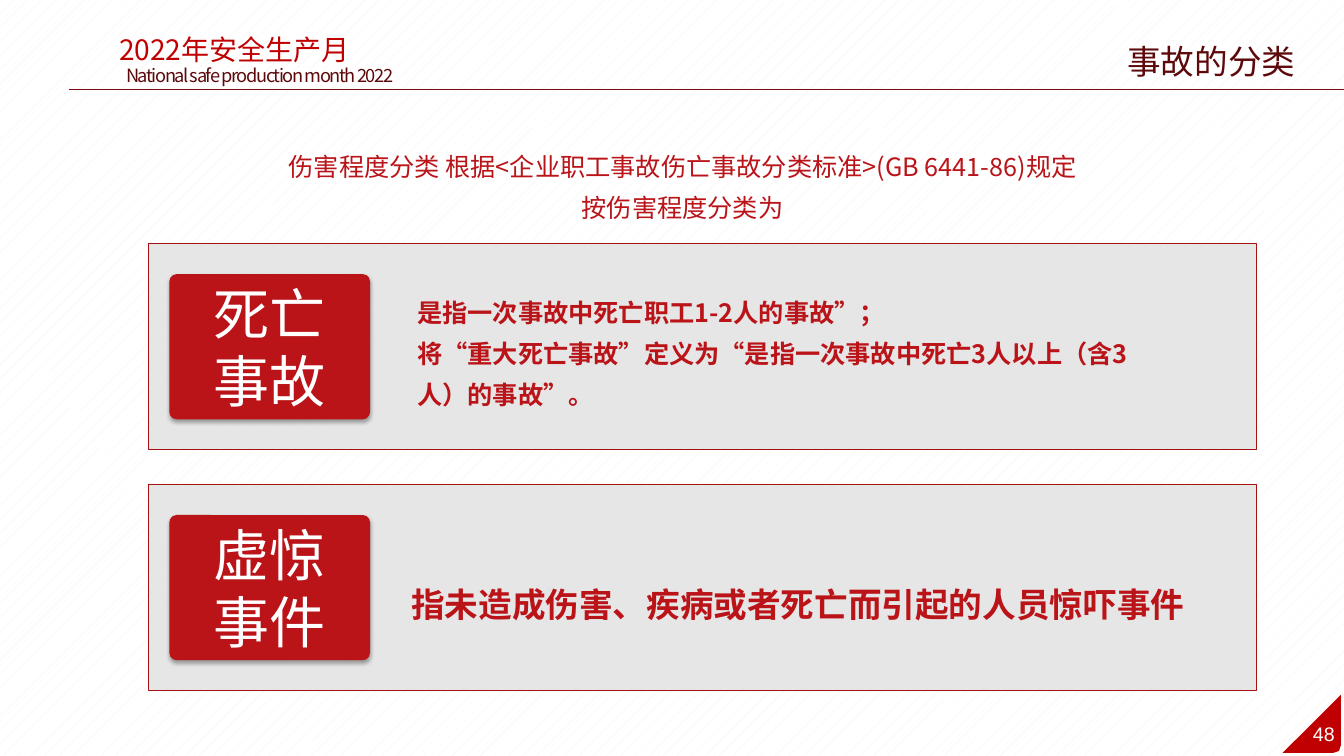
from lxml import etree
from pptx import Presentation
from pptx import util as u
from pptx.dml.color import RGBColor
from pptx.enum import dml, shapes, text
from pptx.oxml import parse_xml
from pptx.oxml.ns import nsdecls, qn

COLORS = {
    "red": "BA1318", "title red": "C00000", "dark red": "5D090C",
    "rule": "7C0D10", "border": "A71116", "grey": "D9D9D9",
    "white": "FFFFFF", "dots": "F2F2F2",
}
FONT = "Noto Sans CJK SC"
CENTER, LEFT = text.PP_ALIGN.CENTER, text.PP_ALIGN.LEFT


def color(name):
    return RGBColor.from_string(COLORS[name])


def write(box, lines, size, ink, align=CENTER, spacing=None, bold=False,
          font=FONT, wrap=True, tracking=None):
    frame = box.text_frame
    frame.word_wrap = wrap
    frame.text = "\n".join(lines)
    for para in frame.paragraphs:
        para.alignment = align
        if spacing:
            para.line_spacing = spacing
        para.font.size = u.Pt(size)
        para.font.bold = bold
        para.font.color.rgb = color(ink)
        para.font.name = font
        props = para._p.pPr.find(qn("a:defRPr"))
        etree.SubElement(props, qn("a:ea")).set("typeface", font)
        if tracking:
            props.set("spc", str(tracking * 100))


deck = Presentation()
deck.slide_width, deck.slide_height = u.Inches(13.33), u.Inches(7.5)
page = deck.slides.add_slide(deck.slide_layouts[6])

# Dotted background
backdrop = page.background.fill
backdrop.patterned()
backdrop.pattern = dml.MSO_PATTERN.PERCENT_5
backdrop.fore_color.rgb = color("dots")
backdrop.back_color.rgb = color("white")

# Header rule
rule = page.shapes.add_connector(
    shapes.MSO_CONNECTOR.STRAIGHT,
    u.Inches(0.68), u.Inches(0.89), u.Inches(13.33), u.Inches(0.89))
rule.line.color.rgb = color("rule")
rule.line.width = u.Pt(0.75)
etree.SubElement(rule._element.spPr, qn("a:effectLst"))

# Page corner with its rounded tip
outline = page.shapes.build_freeform(u.Inches(13.3), u.Inches(6.89))
outline.add_line_segments([
    (u.Inches(x), u.Inches(y)) for x, y in
    [(13.3, 7.39), (13.28, 7.45), (13.22, 7.47), (12.72, 7.47)]])
corner = outline.convert_to_shape()
corner.shadow.inherit = False
corner.fill.solid()
corner.fill.fore_color.rgb = color("title red")
corner.line.fill.background()

# Cards: grey panel with a red label
CARD_TOP, CARD_STEP = 2.42, 2.39
for index, label in enumerate([["死亡", "事故"], ["虚惊", "事件"]]):
    top = CARD_TOP + index * CARD_STEP
    panel = page.shapes.add_shape(
        shapes.MSO_SHAPE.RECTANGLE,
        u.Inches(1.47), u.Inches(top), u.Inches(10.99), u.Inches(2.04))
    panel.shadow.inherit = False
    panel.fill.solid()
    panel.fill.fore_color.rgb = color("grey")
    tint = panel._element.spPr.find(qn("a:solidFill"))[0]
    etree.SubElement(tint, qn("a:alpha")).set("val", "64000")
    panel.line.color.rgb = color("border")
    panel.line.width = u.Pt(0.75)

    badge = page.shapes.add_shape(
        shapes.MSO_SHAPE.ROUNDED_RECTANGLE,
        u.Inches(1.68), u.Inches(top + 0.3), u.Inches(1.99), u.Inches(1.44))
    badge.adjustments[0] = 0.05
    badge.fill.solid()
    badge.fill.fore_color.rgb = color("red")
    badge.line.fill.background()
    badge._element.spPr.append(parse_xml(
        f'<a:effectLst {nsdecls("a")}>'
        f'<a:outerShdw blurRad="{u.Pt(3.1)}" dist="{u.Pt(1.8)}" dir="5400000" rotWithShape="0">'
        '<a:srgbClr val="000000"><a:alpha val="35000"/></a:srgbClr>'
        '</a:outerShdw></a:effectLst>'))
    badge.text_frame.vertical_anchor = text.MSO_ANCHOR.MIDDLE
    write(badge, label, 40, "white")

# Text boxes: place, lines, size, colour, further settings
body = {"spacing": 1.35}
definition = {"align": LEFT, "spacing": 1.35, "bold": True}
texts = [
    ((0.61, 0.27, 3.43, 0.44), ["2022年安全生产月"], 20, "title red", {}),
    ((1.1, 0.59, 2.95, 0.32), ["National safe production month 2022"],
     13, "dark red", {"wrap": False, "tracking": -1}),
    ((10.7, 0.36, 2.63, 0.5), ["事故的分类"], 24, "dark red", {}),
    ((2.32, 1.35, 8.9, 0.89),
     ["伤害程度分类 根据<企业职工事故伤亡事故分类标准>(GB 6441-86)规定", "按伤害程度分类为"],
     18, "red", body),
    ((4.04, 2.8, 7.62, 1.28),
     ["是指一次事故中死亡职工1-2人的事故”；",
      "将“重大死亡事故”定义为“是指一次事故中死亡3人以上（含3人）的事故”。"],
     18, "red", definition),
    ((3.98, 5.6, 8.48, 0.59), ["指未造成伤害、疾病或者死亡而引起的人员惊吓事件"],
     24, "red", definition),
    ((12.91, 7.11, 0.44, 0.34), ["48"], 14, "white", {"font": "Arial", "wrap": False}),
]
for place, lines, size, ink, settings in texts:
    box = page.shapes.add_textbox(*(u.Inches(length) for length in place))
    write(box, lines, size, ink, **settings)

deck.save("out.pptx")
